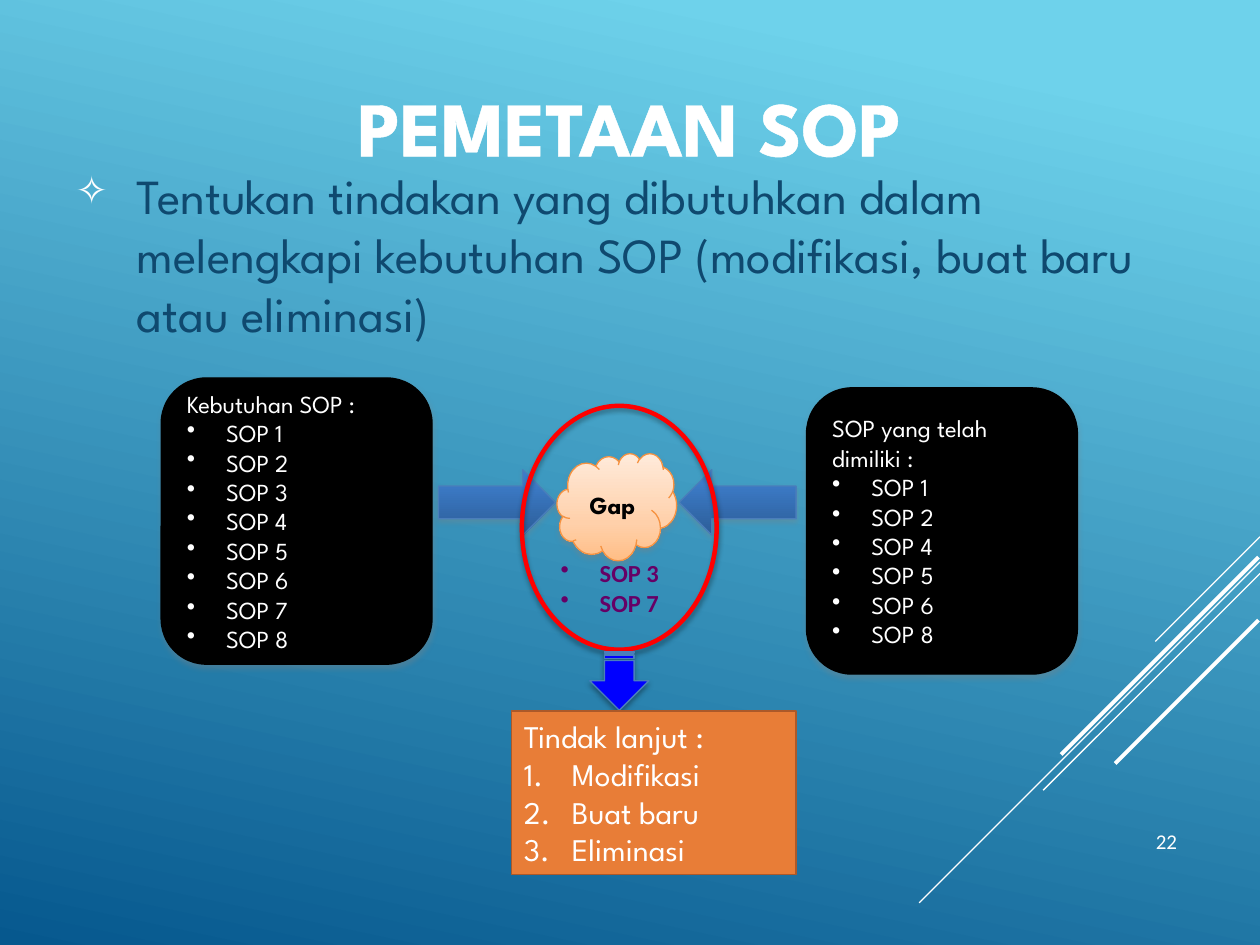
from dataclasses import dataclass

from lxml import etree
from pptx import Presentation
from pptx import util as u
from pptx.dml.color import RGBColor
from pptx.enum import shapes, text
from pptx.oxml import ns

WHITE = RGBColor(0xFF, 0xFF, 0xFF)
BLACK = RGBColor(0, 0, 0)
GREY = RGBColor(0x80, 0x80, 0x80)
NAVY = RGBColor(0x0F, 0x49, 0x6F)
PURPLE = RGBColor(0x66, 0, 0x66)
RED = RGBColor(0xFF, 0, 0)
BLUE = RGBColor(0, 0, 0xFF)
STEEL = RGBColor(0x4A, 0x7E, 0xBB)
ORANGE = RGBColor(0xE8, 0x7D, 0x37)
RUST = RGBColor(0xAC, 0x59, 0x29)
APRICOT = RGBColor(0xF6, 0x92, 0x40)
SKY = [(10, RGBColor(0x6E, 0xD2, 0xEB)), (100, RGBColor(0x06, 0x58, 0x8E))]
ARROW_BLUES = [(0, RGBColor(0x3A, 0x7C, 0xCB)), (20, RGBColor(0x3C, 0x7B, 0xC7)),
               (100, RGBColor(0x2C, 0x5D, 0x98))]
PEACHES = [(0, RGBColor(0xFF, 0xEB, 0xDB)), (65, RGBColor(0xFF, 0xD0, 0xAA)),
           (100, RGBColor(0xFF, 0xBE, 0x86))]
HEADING_FONT = "League Spartan"
NUMBER_FONT = "Calibri"


@dataclass(frozen=True)
class Box:
    left: float
    top: float
    width: float
    height: float

    def lengths(self):
        return [u.Cm(n) for n in (self.left, self.top, self.width, self.height)]


@dataclass(frozen=True)
class Streak:
    x: float
    y: float
    run: float
    weight: float


@dataclass(frozen=True)
class SopList:
    box: Box
    heading: str
    numbers: tuple


STREAKS = [
    Streak(25.4, 10.82, 2.11, 0.75),
    Streak(25.4, 11.33, 6.87, 0.75),
    Streak(25.4, 11.56, 4.37, 0.75),
    Streak(25.37, 11.23, 3.98, 2.25),
    Streak(25.37, 12.5, 2.89, 2.25),
]
SOP_LISTS = [
    SopList(Box(3.25, 7.62, 5.46, 5.77), "Kebutuhan SOP :", tuple(range(1, 9))),
    SopList(Box(16.26, 7.82, 5.46, 5.77), "SOP yang telah dimiliki :", (1, 2, 4, 5, 6, 8)),
]
GAP_ARROWS = [
    (shapes.MSO_SHAPE.RIGHT_ARROW, Box(8.84, 9.47, 2.36, 1.32)),
    (shapes.MSO_SHAPE.LEFT_ARROW, Box(13.69, 9.47, 2.36, 1.32)),
]


def add_xml(parent, tag, **attributes):
    return etree.SubElement(parent, ns.qn(tag), {k: str(v) for k, v in attributes.items()})


def paint_gradient(owner, fill, stops, angle):
    fill.gradient()
    fill.gradient_angle = 360 - angle
    stop_list = next(owner.element.iter(ns.qn("a:gsLst")))
    for old in list(stop_list):
        stop_list.remove(old)
    for position, color in stops:
        stop = add_xml(stop_list, "a:gs", pos=position * 1000)
        add_xml(stop, "a:srgbClr", val=color)


def add_shadow(shape, color, opacity):
    effects = shape.element.spPr.find(ns.qn("a:effectLst"))
    outer = add_xml(effects, "a:outerShdw", blurRad=u.Pt(3.1), dist=u.Pt(1.8),
                    dir=90 * 60000, rotWithShape=0)
    tint = add_xml(outer, "a:srgbClr", val=color)
    add_xml(tint, "a:alpha", val=opacity * 1000)


def add_streak(slide, streak: Streak):
    line = slide.shapes.add_connector(
        shapes.MSO_CONNECTOR.STRAIGHT, u.Cm(streak.x), u.Cm(streak.y),
        u.Cm(streak.x - streak.run), u.Cm(streak.y + streak.run))
    line.line.color.rgb = WHITE
    line.line.width = u.Pt(streak.weight)
    add_xml(line.element.spPr, "a:effectLst")


def add_figure(slide, kind, box: Box, fill, outline, *, weight=0.75, shadow=None,
               opacity=35, adjustments=()):
    figure = slide.shapes.add_shape(kind, *box.lengths())
    for index, value in enumerate(adjustments):
        figure.adjustments[index] = value
    if isinstance(fill, list):
        paint_gradient(figure, figure.fill, fill, 90)
    else:
        figure.fill.solid()
        figure.fill.fore_color.rgb = fill
    figure.line.color.rgb = outline
    figure.line.width = u.Pt(weight)
    figure.shadow.inherit = False
    if shadow is not None:
        add_shadow(figure, shadow, opacity)
    return figure


def add_bullet(paragraph, bullet, indent, color=None, percent=None):
    props = paragraph._p.get_or_add_pPr()
    props.set("marL", str(u.Cm(indent)))
    props.set("indent", str(-u.Cm(indent)))
    if color is not None:
        add_xml(add_xml(props, "a:buClr"), "a:srgbClr", val=color)
    if percent:
        add_xml(props, "a:buSzPct", val=percent * 1000)
    if bullet == "1.":
        add_xml(props, "a:buAutoNum", type="arabicPeriod")
    else:
        add_xml(props, "a:buChar", char=bullet)


def write(shape, lines, *, size, color=WHITE, font=HEADING_FONT, bold=False,
          align=text.PP_ALIGN.LEFT, anchor=text.MSO_ANCHOR.MIDDLE, wrap=True,
          bullet=None, first_bullet=0, indent=0.0, bullet_color=None,
          bullet_percent=None, spacing=0):
    frame = shape.text_frame
    frame.auto_size = text.MSO_AUTO_SIZE.NONE
    frame.word_wrap = wrap
    frame.vertical_anchor = anchor
    for index, line in enumerate(lines):
        paragraph = frame.paragraphs[0] if index == 0 else frame.add_paragraph()
        paragraph.alignment = align
        paragraph.space_before = paragraph.space_after = u.Pt(spacing)
        if bullet and index >= first_bullet:
            add_bullet(paragraph, bullet, indent, bullet_color, bullet_percent)
        run = paragraph.add_run()
        run.text = line
        run.font.size = u.Pt(size)
        run.font.name = font
        run.font.bold = bold
        run.font.color.rgb = color


def add_title(slide, words):
    title = slide.shapes.title
    title.left, title.top, title.width, title.height = Box(0, 0.94, 25.4, 3.18).lengths()
    write(title, [words], size=44, bold=True, align=text.PP_ALIGN.CENTER)
    props = title.text_frame.paragraphs[0].runs[0].font._element
    outline = etree.Element(ns.qn("a:ln"), {"w": str(u.Pt(2.48))})
    add_xml(add_xml(outline, "a:solidFill"), "a:srgbClr", val=WHITE)
    props.insert(0, outline)


def main():
    deck = Presentation()
    deck.slide_width, deck.slide_height = u.Cm(25.4), u.Cm(19.05)
    slide = deck.slides.add_slide(deck.slide_layouts[5])
    paint_gradient(slide, slide.background.fill, SKY, 102)

    for streak in STREAKS:
        add_streak(slide, streak)
    add_title(slide, "PEMETAAN SOP")

    instruction = slide.shapes.add_textbox(*Box(1.27, 2.26, 22.86, 5.72).lengths())
    write(instruction, ["Tentukan tindakan yang dibutuhkan dalam melengkapi kebutuhan SOP "
                        "(modifikasi, buat baru atau eliminasi)"],
          size=28, color=NAVY, bullet="✧", indent=1.24, bullet_color=WHITE,
          bullet_percent=80, spacing=6)
    page_number = slide.shapes.add_textbox(*Box(21.59, 15.49, 2.39, 1.85).lengths())
    write(page_number, ["22"], size=12, font=NUMBER_FONT, align=text.PP_ALIGN.RIGHT,
          anchor=text.MSO_ANCHOR.BOTTOM)

    for sops in SOP_LISTS:
        panel = add_figure(slide, shapes.MSO_SHAPE.ROUNDED_RECTANGLE, sops.box, BLACK, BLACK,
                           shadow=GREY, adjustments=[0.167])
        write(panel, [sops.heading, *(f"SOP {n}" for n in sops.numbers)], size=14,
              bullet="•", first_bullet=1, indent=0.79)
    for kind, box in GAP_ARROWS:
        add_figure(slide, kind, box, ARROW_BLUES, STEEL, shadow=GREY)

    gap = add_figure(slide, shapes.MSO_SHAPE.CLOUD, Box(11.23, 9.14, 2.41, 2.16),
                     PEACHES, APRICOT, shadow=GREY, opacity=38)
    write(gap, ["Gap"], size=14, color=BLACK, bold=True, align=text.PP_ALIGN.CENTER)
    missing = slide.shapes.add_textbox(*Box(11.05, 11.13, 2.51, 1.19).lengths())
    write(missing, ["SOP 3", "SOP 7"], size=14, color=PURPLE, font=NUMBER_FONT, bold=True,
          anchor=text.MSO_ANCHOR.TOP, wrap=False, bullet="•", indent=0.79)
    add_figure(slide, shapes.MSO_SHAPE.DONUT, Box(10.49, 8.15, 3.99, 4.98), RED, RED,
               shadow=BLACK, adjustments=[0.016])
    next_step = add_figure(slide, shapes.MSO_SHAPE.STRIPED_RIGHT_ARROW,
                           Box(11.89, 13.13, 1.19, 1.19), BLUE, STEEL, shadow=BLACK)
    next_step.rotation = 90

    follow_up = add_figure(slide, shapes.MSO_SHAPE.RECTANGLE, Box(10.31, 14.33, 5.74, 3.3),
                           ORANGE, RUST, weight=1)
    write(follow_up, ["Tindak lanjut :", "Modifikasi", "Buat baru", "Eliminasi"], size=18,
          bullet="1.", first_bullet=1, indent=0.97)
    deck.save("out.pptx")


if __name__ == "__main__":
    main()
